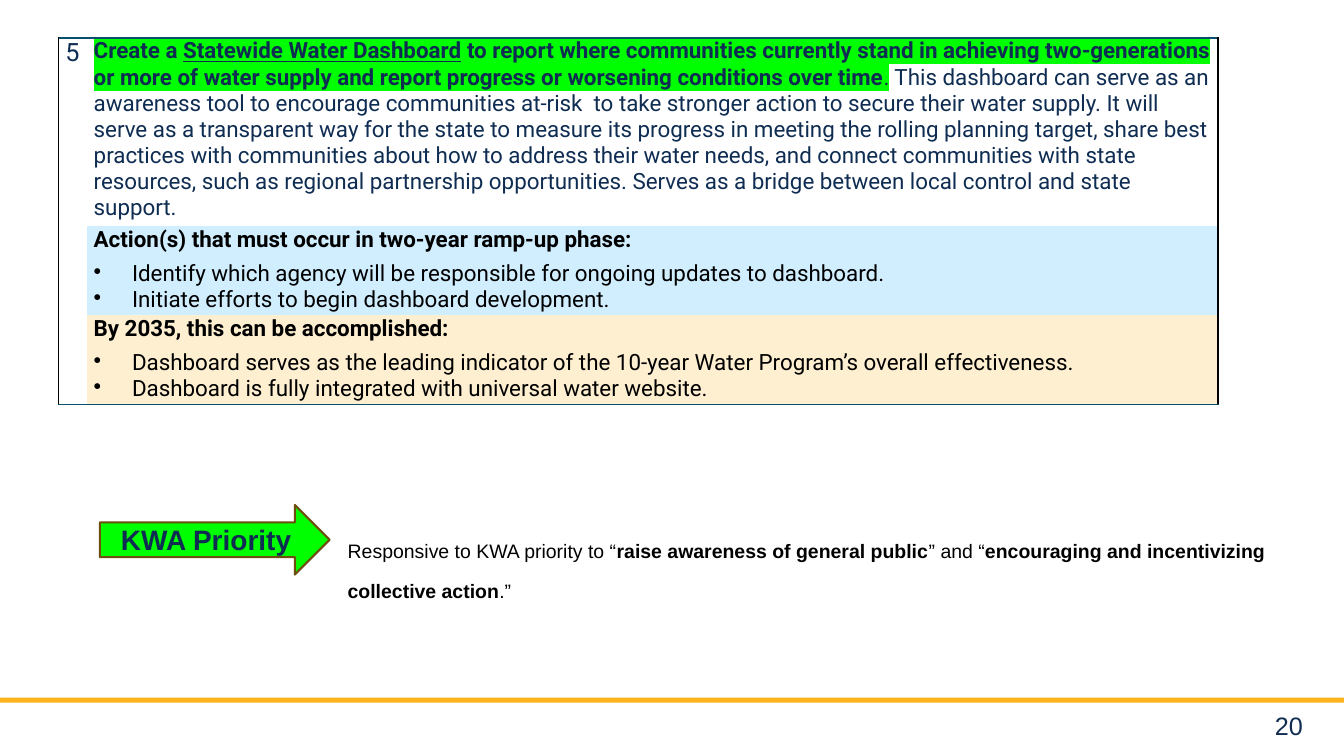
import pptx
import pptx.util
import pptx.dml.color
import pptx.enum.shapes
import pptx.enum.text
import pptx.oxml
import pptx.oxml.ns
import lxml.etree

WIDTH, HEIGHT = 13.33, 7.5
COLORS = {
    "navy": "0F2D52", "black": "000000", "green": "00FF00", "gold": "FCB31C",
    "brown": "6E4E0C", "teal": "074F6A", "sky": "D1EEFF", "cream": "FEEFD1",
}
NO_STYLE = "{2D5ABB26-0587-4C30-8999-92F81FD0307C}"
COLUMNS = (0.28, 11.22)
ROWS = (1.81, 0.86, 0.86)

GOAL = [
    ("Create a ", "bh"),
    ("Statewide Water Dashboard", "bhu"),
    (" to report where communities currently stand in achieving two-generations or more of water "
     "supply and report progress or worsening conditions over time", "bh"),
    (".", "h"),
    (" This dashboard can serve as an awareness tool to encourage communities at-risk  to take "
     "stronger action to secure their water supply. It will serve as a transparent way for the state "
     "to measure its progress in meeting the rolling planning target, share best practices with "
     "communities about how to address their water needs, and connect communities with state "
     "resources, such as regional partnership opportunities. Serves as a bridge between local "
     "control and state support.", ""),
]
PHASES = [
    ("sky", "Action(s) that must occur in two-year ramp-up phase:",
     ["Identify which agency will be responsible for ongoing updates to dashboard.",
      "Initiate efforts to begin dashboard development."]),
    ("cream", "By 2035, this can be accomplished:",
     ["Dashboard serves as the leading indicator of the 10-year Water Program’s overall effectiveness.",
      "Dashboard is fully integrated with universal water website."]),
]
PRIORITY = [
    ("Responsive to KWA priority to “", "s"),
    ("raise awareness of general public", "bs"),
    ("” and “", "s"),
    ("encouraging and incentivizing collective action", "bs"),
    (".”", "s"),
]


def rgb(name):
    return pptx.dml.color.RGBColor.from_string(COLORS[name])


def box(x, y, w, h):
    return [pptx.util.Inches(round(v, 2))
            for v in (x * WIDTH, y * HEIGHT, w * WIDTH, h * HEIGHT)]


def add_xml(parent, tag, **attrs):
    el = lxml.etree.SubElement(parent, pptx.oxml.ns.qn(tag))
    for key, value in attrs.items():
        el.set(key, value)
    return el


def write(p, runs, font, size, color):
    p.font.name, p.font.size = font, pptx.util.Pt(size)
    p.font.color.rgb = rgb(color)
    for text, marks in runs:
        r = p.add_run()
        r.text = text
        rPr = r._r.get_or_add_rPr()
        if "b" in marks:
            r.font.bold = True
        if "u" in marks:
            r.font.underline = True
        if "s" in marks:
            rPr.set("baseline", "30000")
        if "h" in marks:
            add_xml(add_xml(rPr, "a:highlight"), "a:srgbClr", val=COLORS["green"])


def add_bullet(tf, text):
    p = tf.add_paragraph()
    write(p, [(text, "")], "Roboto", 16, "black")
    pPr = p._p.get_or_add_pPr()
    indent = pptx.util.Inches(0.38)
    pPr.set("marL", str(indent))
    pPr.set("indent", str(-indent))
    bullet = add_xml(pPr, "a:buChar", char="•")
    pPr.find(pptx.oxml.ns.qn("a:defRPr")).addprevious(bullet)


def set_borders(cell, borders):
    tcPr = cell._tc.get_or_add_tcPr()
    for side in "LRTB":
        color, width = borders.get(side, (None, 0))
        ln = add_xml(tcPr, f"a:ln{side}", w=str(pptx.util.Pt(width)))
        if color:
            add_xml(add_xml(ln, "a:solidFill"), "a:srgbClr", val=COLORS[color])
        else:
            add_xml(ln, "a:noFill")


def add_goal_table(slide):
    frame = slide.shapes.add_table(
        len(ROWS), len(COLUMNS), *box(0.58 / WIDTH, 0.0507, sum(COLUMNS) / WIDTH, sum(ROWS) / HEIGHT))
    table = frame.table
    table.first_row = table.horz_banding = False
    table._tbl.tblPr.find(pptx.oxml.ns.qn("a:tableStyleId")).text = NO_STYLE
    for column, width in zip(table.columns, COLUMNS):
        column.width = pptx.util.Inches(width)
    for row, height in zip(table.rows, ROWS):
        row.height = pptx.util.Inches(height)

    table.cell(0, 0).merge(table.cell(len(ROWS) - 1, 0))
    for i in range(len(ROWS)):
        for j, side in enumerate("LR"):
            cell = table.cell(i, j)
            cell.margin_left = cell.margin_right = pptx.util.Inches(0.07)
            cell.margin_top = cell.margin_bottom = 0
            borders = {side: ("black", 1)}
            if i == 0:
                borders["T"] = ("teal", 1.5)
            if i == len(ROWS) - 1 or (i, j) == (0, 0):
                borders["B"] = ("teal", 1.5)
            set_borders(cell, borders)
            cell.fill.background()

    headings = [(0, 0, [("5", "")], 18, "navy"), (0, 1, GOAL, 16, "navy")]
    headings += [(i, 1, [(title, "b")], 16, "black") for i, (_, title, _) in enumerate(PHASES, 1)]
    for i, j, runs, size, color in headings:
        p = table.cell(i, j).text_frame.paragraphs[0]
        p.space_after = pptx.util.Pt(6)
        write(p, runs, "Roboto", size, color)
    for i, (fill, _, bullets) in enumerate(PHASES, 1):
        cell = table.cell(i, 1)
        cell.fill.solid()
        cell.fill.fore_color.rgb = rgb(fill)
        for text in bullets:
            add_bullet(cell.text_frame, text)


def add_block(slide, kind, place, fill, line=None):
    sp = slide.shapes.add_shape(kind, *box(*place))
    sp.shadow.inherit = False
    sp.fill.solid()
    sp.fill.fore_color.rgb = rgb(fill)
    if line:
        sp.line.color.rgb = rgb(line)
        sp.line.width = pptx.util.Pt(1.5)
    else:
        sp.line.fill.background()
    return sp


def add_text(slide, place, runs, size, color, align):
    tf = slide.shapes.add_textbox(*box(*place)).text_frame
    tf.word_wrap = True
    p = tf.paragraphs[0]
    p.alignment = align
    write(p, runs, "Arial", size, color)


def main():
    prs = pptx.Presentation()
    prs.slide_width, prs.slide_height = pptx.util.Inches(WIDTH), pptx.util.Inches(HEIGHT)
    slide = prs.slides.add_slide(prs.slide_layouts[6])
    shapes = pptx.enum.shapes.MSO_SHAPE
    align = pptx.enum.text.PP_ALIGN

    add_block(slide, shapes.RECTANGLE, (-0.0135, 0.9227, 1.024, 0.0067), "gold")
    add_text(slide, (0.9062, 0.9333, 0.0705, 0.0467), [("20", "")], 18, "navy", align.RIGHT)
    add_goal_table(slide)

    arrow = add_block(slide, shapes.RIGHT_ARROW, (0.0743, 0.668, 0.171, 0.092), "green", "brown")
    tf = arrow.text_frame
    tf.vertical_anchor = pptx.enum.text.MSO_ANCHOR.MIDDLE
    p = tf.paragraphs[0]
    p.alignment = align.CENTER
    write(p, [("KWA Priority", "b")], "Arial", 20, "navy")
    add_text(slide, (0.2513, 0.7013, 0.6977, 0.1027), PRIORITY, 24, "black", align.LEFT)
    prs.save("out.pptx")


if __name__ == "__main__":
    main()
